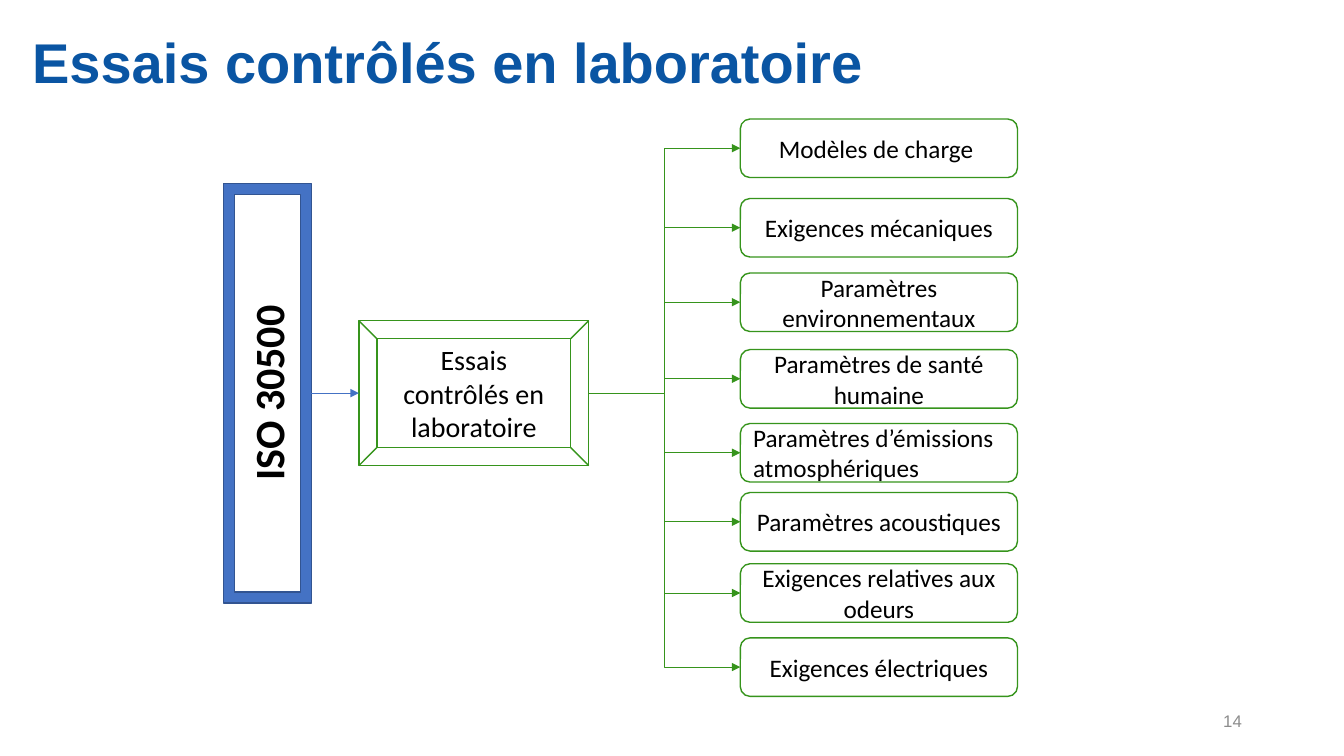
from dataclasses import dataclass

from pptx import Presentation
from pptx.dml.color import RGBColor
from pptx.enum.shapes import MSO_CONNECTOR, MSO_SHAPE
from pptx.enum.text import MSO_ANCHOR, MSO_AUTO_SIZE, PP_ALIGN
from pptx.oxml.ns import qn
from pptx.shapes.autoshape import Shape
from pptx.shapes.connector import Connector
from pptx.slide import Slide
from pptx.util import Pt

ELBOW = MSO_CONNECTOR.ELBOW
STRAIGHT = MSO_CONNECTOR.STRAIGHT
BEVEL = MSO_SHAPE.BEVEL
FRAME = MSO_SHAPE.FRAME
ROUNDED = MSO_SHAPE.ROUNDED_RECTANGLE
MIDDLE = MSO_ANCHOR.MIDDLE
NO_AUTOFIT = MSO_AUTO_SIZE.NONE
LEFT = PP_ALIGN.LEFT
CENTER = PP_ALIGN.CENTER
RIGHT = PP_ALIGN.RIGHT

TITLE_BLUE = RGBColor(0x0A, 0x55, 0xA3)
BLUE = RGBColor(0x44, 0x72, 0xC4)
DARK_BLUE = RGBColor(0x32, 0x54, 0x91)
GREEN = RGBColor(0x36, 0x94, 0x1C)
BLACK = RGBColor(0x00, 0x00, 0x00)
GRAY = RGBColor(0x8C, 0x8C, 0x8C)

TITLE_ONLY = 5
RIGHT_SIDE = 3
TOPIC_LEFT, TOPIC_WIDTH, TOPIC_HEIGHT = 528.8, 198, 41.8


@dataclass(frozen=True)
class Box:
    left: float
    top: float
    width: float
    height: float

    @property
    def right(self) -> float:
        return self.left + self.width

    @property
    def middle(self) -> float:
        return self.top + self.height / 2


@dataclass(frozen=True)
class TextStyle:
    size: float
    font: str = "Calibri"
    color: RGBColor = BLACK
    bold: bool = False
    alignment: PP_ALIGN = CENTER


@dataclass(frozen=True)
class Topic:
    text: str
    top: float
    alignment: PP_ALIGN = CENTER


TITLE_BOX = Box(23, 10.8, 881.3, 71.3)
STANDARD_BOX = Box(159.8, 131, 62.6, 299.6)
TESTS_BOX = Box(256.3, 229, 164.2, 103.6)
NUMBER_BOX = Box(678.2, 500.4, 216, 28.8)

TOPICS = [
    Topic("Modèles de charge ", 85),
    Topic("Exigences mécaniques", 141.8),
    Topic("Paramètres environnementaux", 195),
    Topic("Paramètres de santé humaine", 249.7),
    Topic("Paramètres d’émissions atmosphériques", 302.5, LEFT),
    Topic("Paramètres acoustiques", 351.8),
    Topic("Exigences relatives aux odeurs", 402.7),
    Topic("Exigences électriques", 455.6),
]


def write_text(shape: Shape, text: str, style: TextStyle) -> None:
    frame = shape.text_frame
    frame.word_wrap = True
    frame.auto_size = NO_AUTOFIT
    frame.vertical_anchor = MIDDLE
    paragraph = frame.paragraphs[0]
    paragraph.alignment = style.alignment
    run = paragraph.add_run()
    run.text = text
    run.font.size = Pt(style.size)
    run.font.name = style.font
    run.font.bold = style.bold
    run.font.color.rgb = style.color


def add_title(slide: Slide, text: str) -> None:
    title = slide.shapes.title
    title.left, title.top = Pt(TITLE_BOX.left), Pt(TITLE_BOX.top)
    title.width, title.height = Pt(TITLE_BOX.width), Pt(TITLE_BOX.height)
    write_text(title, text, TextStyle(40, "Arial", TITLE_BLUE, True, LEFT))
    frame = title.text_frame
    frame.margin_left = frame.margin_right = Pt(0)
    frame.margin_top = frame.margin_bottom = Pt(0)
    frame.paragraphs[0].line_spacing = 0.9


def add_box(slide: Slide, kind: MSO_SHAPE, box: Box, line: RGBColor,
            text: str, style: TextStyle) -> Shape:
    shape = slide.shapes.add_shape(
        kind, Pt(box.left), Pt(box.top), Pt(box.width), Pt(box.height))
    shape.shadow.inherit = False
    shape.fill.background()
    shape.line.color.rgb = line
    shape.line.width = Pt(1)
    write_text(shape, text, style)
    return shape


def add_arrow(slide: Slide, kind: MSO_CONNECTOR, start: tuple[float, float],
              end: tuple[float, float], color: RGBColor) -> Connector:
    arrow = slide.shapes.add_connector(
        kind, Pt(start[0]), Pt(start[1]), Pt(end[0]), Pt(end[1]))
    arrow.line.color.rgb = color
    arrow.line.width = Pt(0.5)
    line = arrow.line._get_or_add_ln()
    line.append(line.makeelement(qn("a:tailEnd"), {"type": "triangle"}))
    properties = arrow._element.spPr
    properties.append(properties.makeelement(qn("a:effectLst"), {}))
    return arrow


def add_standard(slide: Slide) -> None:
    standard = add_box(slide, FRAME, STANDARD_BOX, DARK_BLUE, "ISO 30500",
                       TextStyle(30, bold=True))
    standard.fill.solid()
    standard.fill.fore_color.rgb = BLUE
    standard.text_frame._txBody.bodyPr.set("vert", "vert270")
    arrow = add_arrow(slide, STRAIGHT,
                      (STANDARD_BOX.right, STANDARD_BOX.middle),
                      (TESTS_BOX.left, TESTS_BOX.middle), BLUE)
    arrow.begin_connect(standard, RIGHT_SIDE)


def add_topic(slide: Slide, topic: Topic) -> None:
    box = Box(TOPIC_LEFT, topic.top, TOPIC_WIDTH, TOPIC_HEIGHT)
    add_box(slide, ROUNDED, box, GREEN, topic.text,
            TextStyle(18, alignment=topic.alignment))
    add_arrow(slide, ELBOW, (TESTS_BOX.right, TESTS_BOX.middle),
              (box.left, box.middle), GREEN)


def add_slide_number(slide: Slide, number: str) -> None:
    shape = slide.shapes.add_textbox(
        Pt(NUMBER_BOX.left), Pt(NUMBER_BOX.top),
        Pt(NUMBER_BOX.width), Pt(NUMBER_BOX.height))
    write_text(shape, number, TextStyle(12, "Arial", GRAY, alignment=RIGHT))


def main() -> None:
    presentation = Presentation()
    presentation.slide_width = Pt(960)
    presentation.slide_height = Pt(540)
    slide = presentation.slides.add_slide(
        presentation.slide_layouts[TITLE_ONLY])
    heading = "Essais contrôlés en laboratoire"
    add_title(slide, heading)
    add_box(slide, BEVEL, TESTS_BOX, GREEN, heading, TextStyle(20))
    add_standard(slide)
    for topic in TOPICS:
        add_topic(slide, topic)
    add_slide_number(slide, "14")
    presentation.save("out.pptx")


if __name__ == "__main__":
    main()
